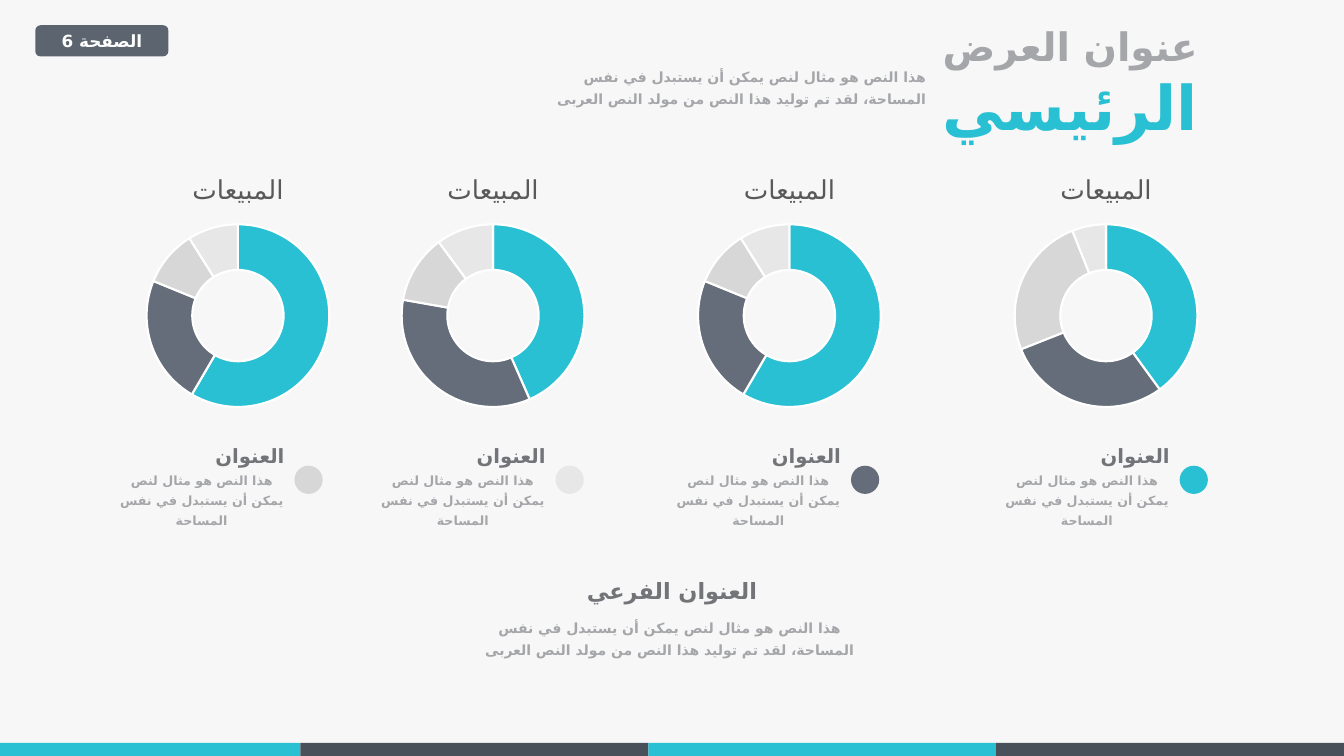
from lxml.etree import SubElement
from pptx import Presentation
from pptx.chart.data import CategoryChartData
from pptx.dml.color import RGBColor
from pptx.enum.chart import XL_CHART_TYPE as ChartType
from pptx.enum.shapes import MSO_SHAPE as Preset
from pptx.enum.text import MSO_ANCHOR as Anchor, MSO_AUTO_SIZE as AutoSize, PP_ALIGN as Align
from pptx.oxml.ns import qn
from pptx.util import Inches, Pt

FONT = "Roboto"
ARABIC_FONT = "DejaVu Sans"  # Roboto has no Arabic letters
BACKGROUND = RGBColor(0xF7, 0xF7, 0xF7)
WHITE = RGBColor(0xFF, 0xFF, 0xFF)
BLACK = RGBColor(0x00, 0x00, 0x00)
TURQUOISE = RGBColor(0x2A, 0xC0, 0xD4)
SLATE = RGBColor(0x65, 0x6D, 0x7A)
BADGE = RGBColor(0x5C, 0x64, 0x70)
DARK = RGBColor(0x49, 0x50, 0x5A)
SILVER = RGBColor(0xD7, 0xD7, 0xD7)
PALE = RGBColor(0xE7, 0xE7, 0xE7)
HEADING = RGBColor(0x72, 0x74, 0x78)
BODY = RGBColor(0xA5, 0xA6, 0xA9)
CHART_TITLE = RGBColor(0x59, 0x59, 0x59)

SHORT_TEXT = "هذا النص هو مثال لنص يمكن أن يستبدل في نفس المساحة"
LONG_TEXT = SHORT_TEXT + "، لقد تم توليد هذا النص من مولد النص العربى"


def style_paragraph(paragraph, size, color, align=Align.CENTER, spacing=1.0, bold=True):
    """Format a right-to-left paragraph and its run."""
    paragraph.alignment = align
    paragraph.line_spacing = spacing
    paragraph._p.get_or_add_pPr().set("rtl", "1")
    font = paragraph.runs[0].font
    font.size, font.bold, font.name = Pt(size), bold, FONT
    font.color.rgb = color
    SubElement(font._element, qn("a:cs"), typeface=ARABIC_FONT)


def add_text(box, text, size, color, **options):
    text_box = slide.shapes.add_textbox(*map(Inches, box))
    frame = text_box.text_frame
    frame.word_wrap = True
    frame.auto_size = AutoSize.SHAPE_TO_FIT_TEXT
    frame.text = text
    style_paragraph(frame.paragraphs[0], size, color, **options)


presentation = Presentation()
presentation.slide_width = Inches(13.33)
presentation.slide_height = Inches(7.5)
slide = presentation.slides.add_slide(presentation.slide_layouts[5])
slide.background.fill.solid()
slide.background.fill.fore_color.rgb = BACKGROUND

# Title
title = slide.shapes.title
title.left, title.top = Inches(8.29), Inches(0.17)
title.width, title.height = Inches(4.65), Inches(1.31)
title.text_frame.text = "عنوان العرض\nالرئيسي"
title.text_frame.vertical_anchor = Anchor.TOP
title.text_frame.auto_size = AutoSize.NONE
for paragraph, size, color in zip(title.text_frame.paragraphs, (28, 44), (BODY, TURQUOISE)):
    style_paragraph(paragraph, size, color)

# Page badge, bottom band and legend dots
dot_lefts = (11.7, 8.44, 5.51, 2.92)
filled_shapes = [(Preset.ROUNDED_RECTANGLE, (0.35, 0.25, 1.32, 0.31), BADGE)]
band_edges = (0, 2.98, 6.43, 9.88, 13.33)
for index, (left, right) in enumerate(zip(band_edges, band_edges[1:])):
    color = DARK if index % 2 else TURQUOISE
    filled_shapes.append((Preset.RECTANGLE, (left, 7.37, right - left, 0.13), color))
for left, color in zip(dot_lefts, (TURQUOISE, SLATE, PALE, SILVER)):
    filled_shapes.append((Preset.OVAL, (left, 4.62, 0.28, 0.28), color))

for preset, box, color in filled_shapes:
    shape = slide.shapes.add_shape(preset, *map(Inches, box))
    shape.shadow.inherit = False
    shape.fill.solid()
    shape.fill.fore_color.rgb = color
    shape.line.fill.background()
    if preset == Preset.ROUNDED_RECTANGLE:
        shape.text_frame.text = "الصفحة 6"
        shape.text_frame.vertical_anchor = Anchor.MIDDLE
        style_paragraph(shape.text_frame.paragraphs[0], 12, WHITE)

# Introduction and subtitle
add_text((5.12, 0.58, 4.16, 0.53), LONG_TEXT, 10, BODY, align=Align.RIGHT, spacing=1.3)
add_text((5.57, 5.68, 2.19, 0.37), "العنوان الفرعي", 16, HEADING)
add_text((4.56, 6.05, 4.16, 0.53), LONG_TEXT, 10, BODY, spacing=1.3)

# Legend headings and captions
for left in dot_lefts:
    add_text((left - 1.9, 4.6, 1.96, 0.48), SHORT_TEXT, 9, BODY, spacing=1.3)
    add_text((left - 1.53, 4.36, 1.53, 0.34), "العنوان", 14, HEADING, align=Align.RIGHT)

# Doughnut charts
sales = (
    (9, (40, 29, 25, 6)),
    (5.86, (59, 23, 10, 9)),
    (2.92, (43, 34, 12, 10)),
    (0.39, (59, 23, 10, 9)),
)
plot_layout = (
    ("layoutTarget", "inner"), ("xMode", "edge"), ("yMode", "edge"),
    ("x", "0.27"), ("y", "0.25"), ("w", "0.46"), ("h", "0.7"),
)
for left, values in sales:
    chart_data = CategoryChartData()
    chart_data.categories = ["1", "2", "3", "4"]
    chart_data.add_series("المبيعات", values)
    chart = slide.shapes.add_chart(
        ChartType.DOUGHNUT, Inches(left), Inches(1.56), Inches(3.94), Inches(2.62), chart_data
    ).chart
    chart.has_legend = False
    chart.font.size, chart.font.name = Pt(10), FONT
    chart.font.color.rgb = BLACK
    chart.has_title = True
    chart.chart_title.include_in_layout = False
    title_frame = chart.chart_title.text_frame
    title_frame.text = "المبيعات"
    style_paragraph(title_frame.paragraphs[0], 18.6, CHART_TITLE, bold=False)

    # Ring position inside the chart
    plot_area = chart._chartSpace.chart.plotArea
    for old_layout in plot_area.findall(qn("c:layout")):
        plot_area.remove(old_layout)
    layout = SubElement(plot_area, qn("c:layout"))
    plot_area.insert(0, layout)
    manual_layout = SubElement(layout, qn("c:manualLayout"))
    for name, value in plot_layout:
        SubElement(manual_layout, qn(f"c:{name}"), val=value)

    plot = chart.plots[0]
    plot.vary_by_categories = True
    plot._element.find(qn("c:holeSize")).set("val", "75")
    for index, color in enumerate((TURQUOISE, SLATE, SILVER, PALE)):
        slice_format = plot.series[0].points[index].format
        slice_format.fill.solid()
        slice_format.fill.fore_color.rgb = color
        slice_format.line.color.rgb = WHITE
        slice_format.line.width = Pt(1.5)

presentation.save("out.pptx")
